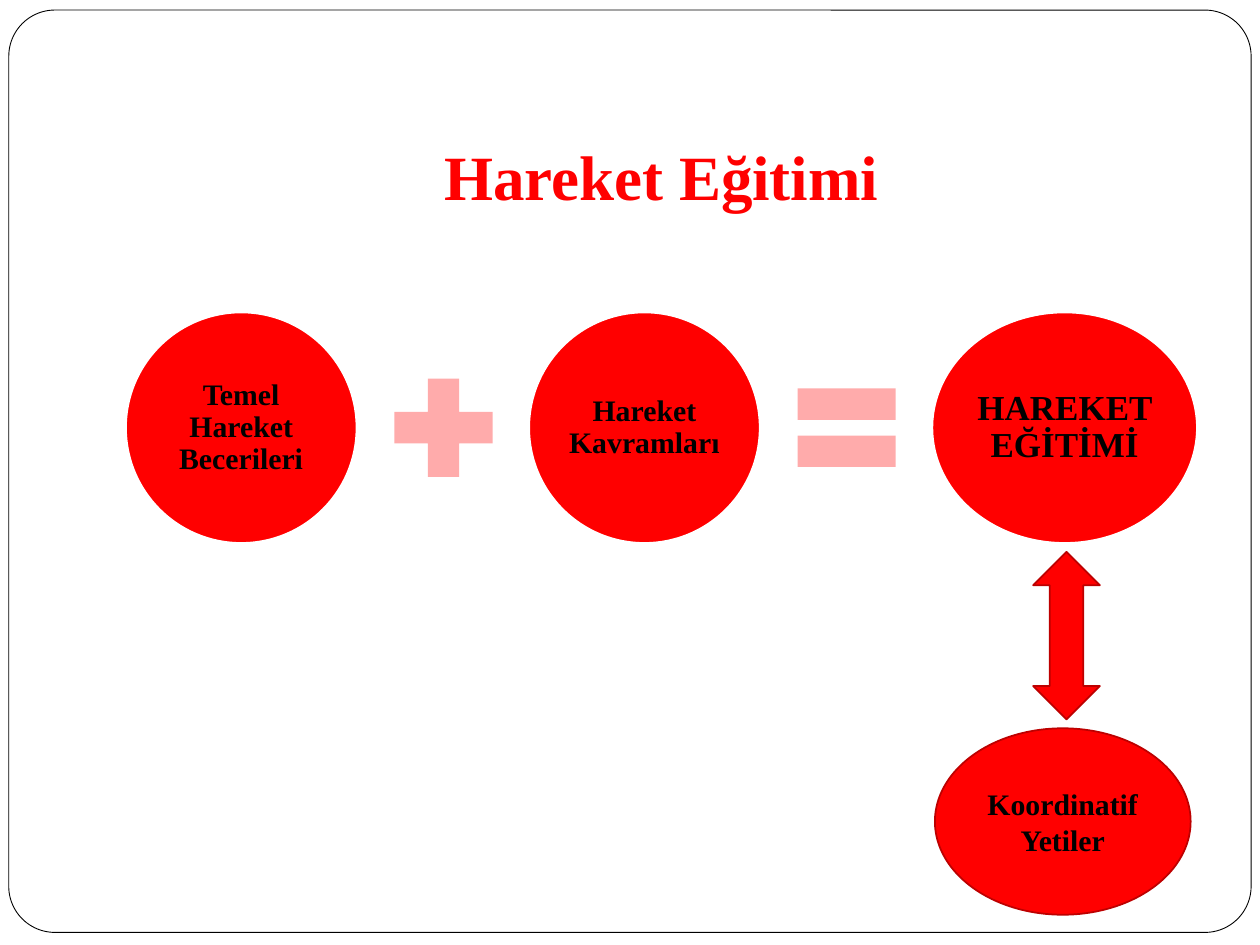
import dataclasses

import pptx
import pptx.dml.color
import pptx.enum.shapes
import pptx.enum.text
import pptx.util

Inches = pptx.util.Inches
Shapes = pptx.enum.shapes.MSO_SHAPE
Anchor = pptx.enum.text.MSO_ANCHOR


@dataclasses.dataclass(frozen=True)
class Theme:
    font: str = "Times New Roman"
    red: str = "FF0000"
    dark_red: str = "BD0000"
    pink: str = "FFABAB"
    black: str = "000000"
    white: str = "FFFFFF"
    title_size: int = 36
    result_size: int = 20
    label_size: int = 17


class SlideBuilder:
    def __init__(self, slide, theme):
        self.slide = slide
        self.theme = theme

    def color(self, value):
        return pptx.dml.color.RGBColor.from_string(value)

    def shape(self, kind, box, fill, line=None, line_width=1):
        """Add a flat preset shape; box is left, top, width, height in inches."""
        shape = self.slide.shapes.add_shape(kind, *map(Inches, box))
        shape.shadow.inherit = False
        shape.fill.solid()
        shape.fill.fore_color.rgb = self.color(fill)
        if line:
            shape.line.color.rgb = self.color(line)
            shape.line.width = pptx.util.Pt(line_width)
        else:
            shape.line.fill.background()
        return shape

    def set_text(self, shape, text, size, color, anchor, margins, spacing=1.0):
        """Set centred bold text; margins are left, top, right, bottom in inches."""
        frame = shape.text_frame
        frame.word_wrap = True
        frame.vertical_anchor = anchor
        (frame.margin_left, frame.margin_top,
         frame.margin_right, frame.margin_bottom) = map(Inches, margins)
        paragraph = frame.paragraphs[0]
        paragraph.alignment = pptx.enum.text.PP_ALIGN.CENTER
        paragraph.line_spacing = spacing
        run = paragraph.add_run()
        run.text = text
        run.font.name = self.theme.font
        run.font.size = pptx.util.Pt(size)
        run.font.bold = True
        run.font.color.rgb = self.color(color)

    def frame(self, box):
        frame = self.shape(Shapes.ROUNDED_RECTANGLE, box,
                           self.theme.white, self.theme.black, 0.5)
        frame.adjustments[0] = 0.05

    def title(self, text, box):
        title = self.slide.shapes.add_textbox(*map(Inches, box))
        self.set_text(title, text, self.theme.title_size, self.theme.red,
                      Anchor.BOTTOM, (0.1, 0.05, 0.1, 0.1))

    def ellipse(self, text, box, size, line, margins, spacing=1.0):
        ellipse = self.shape(Shapes.OVAL, box, self.theme.red, line)
        self.set_text(ellipse, text, size, self.theme.black,
                      Anchor.MIDDLE, margins, spacing)

    def operator(self, kind, box):
        self.shape(kind, box, self.theme.pink)

    def arrow(self, box):
        self.shape(Shapes.UP_DOWN_ARROW, box, self.theme.red, self.theme.dark_red)


def main():
    presentation = pptx.Presentation()
    presentation.slide_width = Inches(10)
    presentation.slide_height = Inches(7.5)
    slide = presentation.slides.add_slide(presentation.slide_layouts[6])
    theme = Theme()
    builder = SlideBuilder(slide, theme)

    builder.frame((0.07, 0.08, 9.86, 7.32))
    builder.title("Hareket Eğitimi", (1, 0.62, 8.5, 1.17))

    left, top, pitch, diameter = 1, 2.48, 3.2, 1.83
    terms = [
        ("Temel Hareket Becerileri", diameter, theme.label_size, 0.02),
        ("Hareket Kavramları", diameter, theme.label_size, 0.02),
        ("HAREKET EĞİTİMİ", 2.1, theme.result_size, 0.03),
    ]
    for index, (text, width, size, margin) in enumerate(terms):
        builder.ellipse(text, (left + index * pitch, top, width, diameter),
                        size, theme.white, (margin,) * 4, 0.9)

    operator_size = 1.06
    operator_top = top + (diameter - operator_size) / 2
    for index, kind in enumerate((Shapes.MATH_PLUS, Shapes.MATH_EQUAL)):
        builder.operator(kind, (2.99 + index * pitch, operator_top,
                                operator_size, operator_size))

    builder.ellipse("Koordinatif Yetiler", (7.42, 5.78, 2.03, 1.48),
                    theme.label_size, theme.dark_red, (0.1, 0.05, 0.1, 0.05))
    builder.arrow((8.2, 4.38, 0.53, 1.33))

    presentation.save("out.pptx")


if __name__ == "__main__":
    main()
